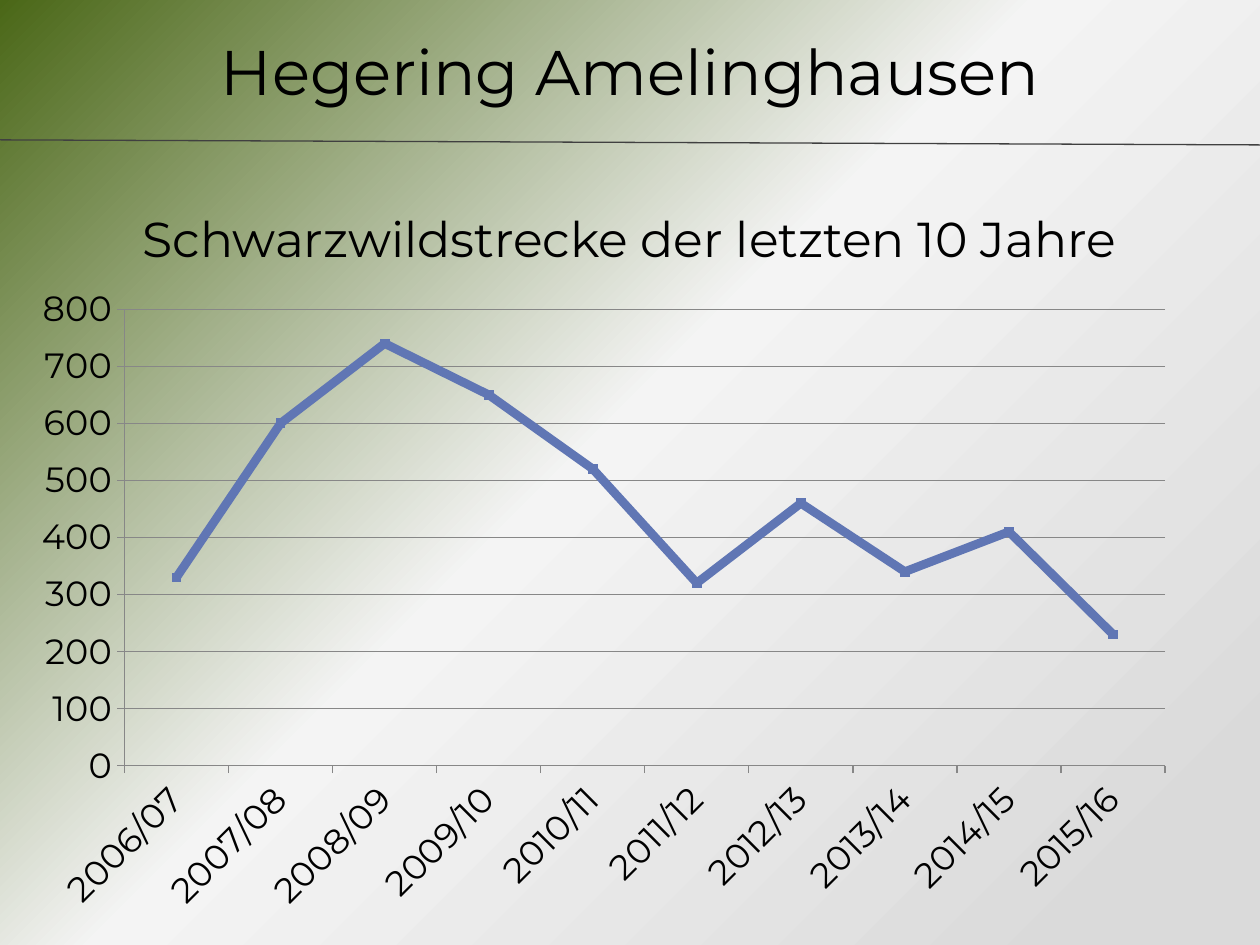
import copy

import pptx
import pptx.chart.data
import pptx.dml.color
import pptx.enum.chart
import pptx.enum.shapes
import pptx.enum.text
import pptx.oxml
import pptx.oxml.ns
import pptx.util
from pptx.util import Inches

COLORS = {
    "green": "4A6717",
    "light": "F4F4F4",
    "grey": "DADADA",
    "text": "000000",
    "rule": "404040",
    "grid": "878787",
    "series": "6076B4",
}
FONT = "Montserrat"
SEASONS = [f"{year}/{(year + 1) % 100:02d}" for year in range(2006, 2016)]
BAGGED = [330, 600, 740, 650, 520, 320, 460, 340, 410, 230]
PLOT_AREA = {"x": 0.076, "y": 0.051, "w": 0.874, "h": 0.698}


def rgb(name):
    return pptx.dml.color.RGBColor.from_string(COLORS[name])


def style_font(font, size):
    font.name = FONT
    font.size = pptx.util.Pt(size)
    font.color.rgb = rgb("text")


def style_line(line, color, width):
    line.color.rgb = rgb(color)
    line.width = pptx.util.Pt(width)


def set_background(page):
    """Diagonal gradient with three stops."""
    fill = page.background.fill
    fill.gradient()
    fill.gradient_angle = 315
    stop_list = page.element.xpath(".//p:bg//a:gsLst")[0]
    stop_list.append(copy.deepcopy(stop_list[-1]))
    stops = [("green", 0), ("light", 0.47), ("grey", 0.92)]
    for stop, (color, position) in zip(fill.gradient_stops, stops):
        stop.color.rgb = rgb(color)
        stop.position = position


def add_heading(page, text, left, top, width, height, size, anchor):
    box = page.shapes.add_textbox(Inches(left), Inches(top), Inches(width), Inches(height))
    frame = box.text_frame
    frame.word_wrap = True
    frame.vertical_anchor = anchor
    frame.text = text
    para = frame.paragraphs[0]
    para.alignment = pptx.enum.text.PP_ALIGN.CENTER
    style_font(para.runs[0].font, size)
    return para


def add_rule(page):
    rule = page.shapes.add_connector(
        pptx.enum.shapes.MSO_CONNECTOR.STRAIGHT,
        Inches(-0.02), Inches(1.11), Inches(10), Inches(1.15))
    style_line(rule.line, "rule", 0.75)
    rule.element.spPr.append(pptx.oxml.parse_xml(
        f"<a:effectLst {pptx.oxml.ns.nsdecls('a')}/>"))


def set_plot_area(chart):
    """Fix the inner plot area as fractions of the chart."""
    plot_area = chart.element.xpath(".//c:plotArea")[0]
    for layout in plot_area.xpath("./c:layout"):
        plot_area.remove(layout)
    sizes = "".join(f'<c:{key} val="{value}"/>' for key, value in PLOT_AREA.items())
    plot_area.insert(0, pptx.oxml.parse_xml(
        f"<c:layout {pptx.oxml.ns.nsdecls('c')}><c:manualLayout>"
        '<c:layoutTarget val="inner"/><c:xMode val="edge"/><c:yMode val="edge"/>'
        f"{sizes}</c:manualLayout></c:layout>"))


def style_axes(chart):
    for axis in (chart.category_axis, chart.value_axis):
        axis.major_tick_mark = pptx.enum.chart.XL_TICK_MARK.OUTSIDE
        axis.minor_tick_mark = pptx.enum.chart.XL_TICK_MARK.NONE
        style_line(axis.format.line, "grid", 0.75)
        style_font(axis.tick_labels.font, 20)
    label_body = chart.element.xpath(".//c:catAx/c:txPr/a:bodyPr")[0]
    label_body.set("rot", "-2700000")
    values = chart.value_axis
    values.minimum_scale, values.maximum_scale, values.major_unit = 0, 800, 100
    values.has_major_gridlines = True
    style_line(values.major_gridlines.format.line, "grid", 0.75)


def add_line_chart(page):
    data = pptx.chart.data.CategoryChartData()
    data.categories = SEASONS
    data.add_series("Series 1", BAGGED)
    chart = page.shapes.add_chart(
        pptx.enum.chart.XL_CHART_TYPE.LINE_MARKERS_STACKED,
        Inches(0.27), Inches(2.19), Inches(9.45), Inches(5.19), data).chart
    chart.has_legend = False
    chart.has_title = False
    style_font(chart.font, 18)
    chart.font.name = "Vollkorn"
    chart.plots[0].vary_by_categories = False
    style_axes(chart)
    set_plot_area(chart)

    series = chart.plots[0].series[0]
    series.smooth = False
    style_line(series.format.line, "series", 5)
    marker = series.marker
    marker.style = pptx.enum.chart.XL_MARKER_STYLE.SQUARE
    marker.size = 5
    marker.format.fill.solid()
    marker.format.fill.fore_color.rgb = rgb("series")
    marker.format.line.color.rgb = rgb("series")


def main():
    deck = pptx.Presentation()
    deck.slide_width, deck.slide_height = Inches(10), Inches(7.5)
    page = deck.slides.add_slide(deck.slide_layouts[6])
    anchor = pptx.enum.text.MSO_ANCHOR
    set_background(page)
    add_heading(page, "Hegering Amelinghausen", 0, 0.21, 10, 1.01, 36, anchor.TOP)
    add_rule(page)
    title = add_heading(page, "Schwarzwildstrecke der letzten 10 Jahre",
                        0.27, 1.15, 9.45, 1.02, 28, anchor.BOTTOM)
    title.line_spacing = pptx.util.Pt(58)
    add_line_chart(page)
    deck.save("out.pptx")


if __name__ == "__main__":
    main()
